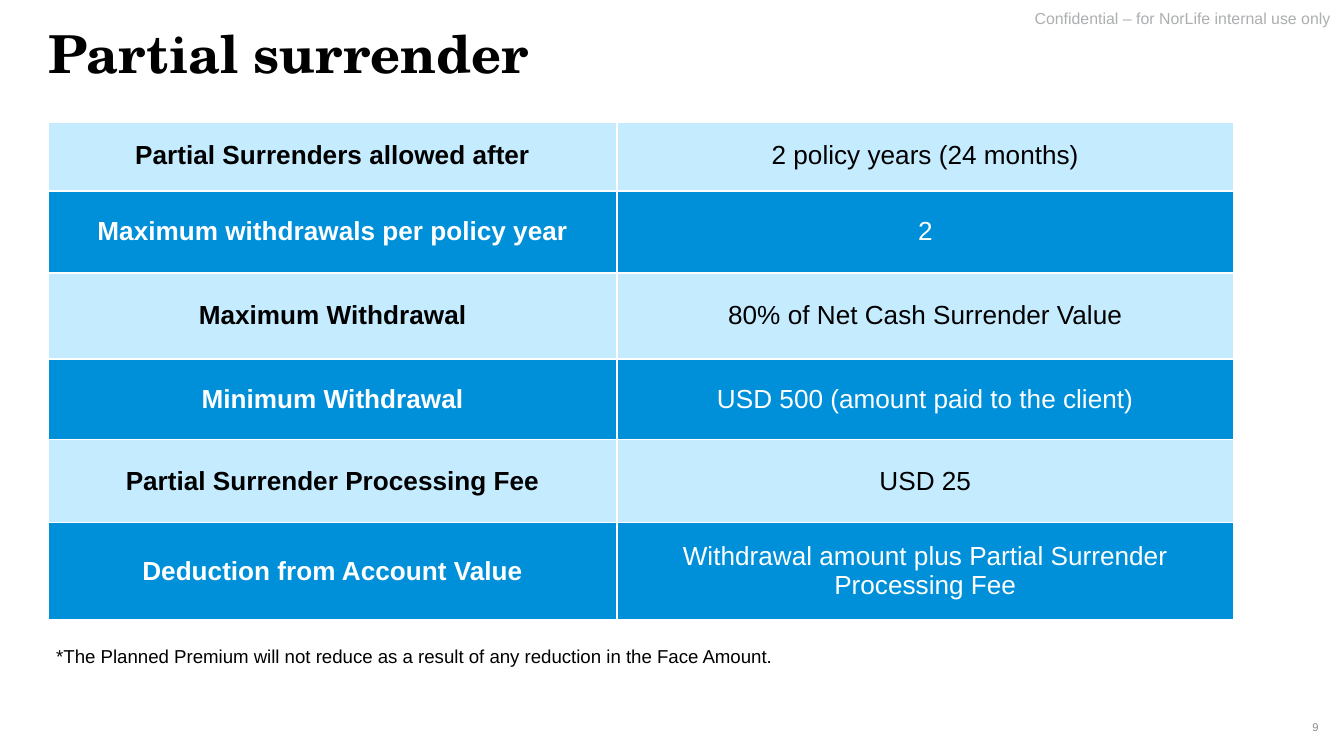
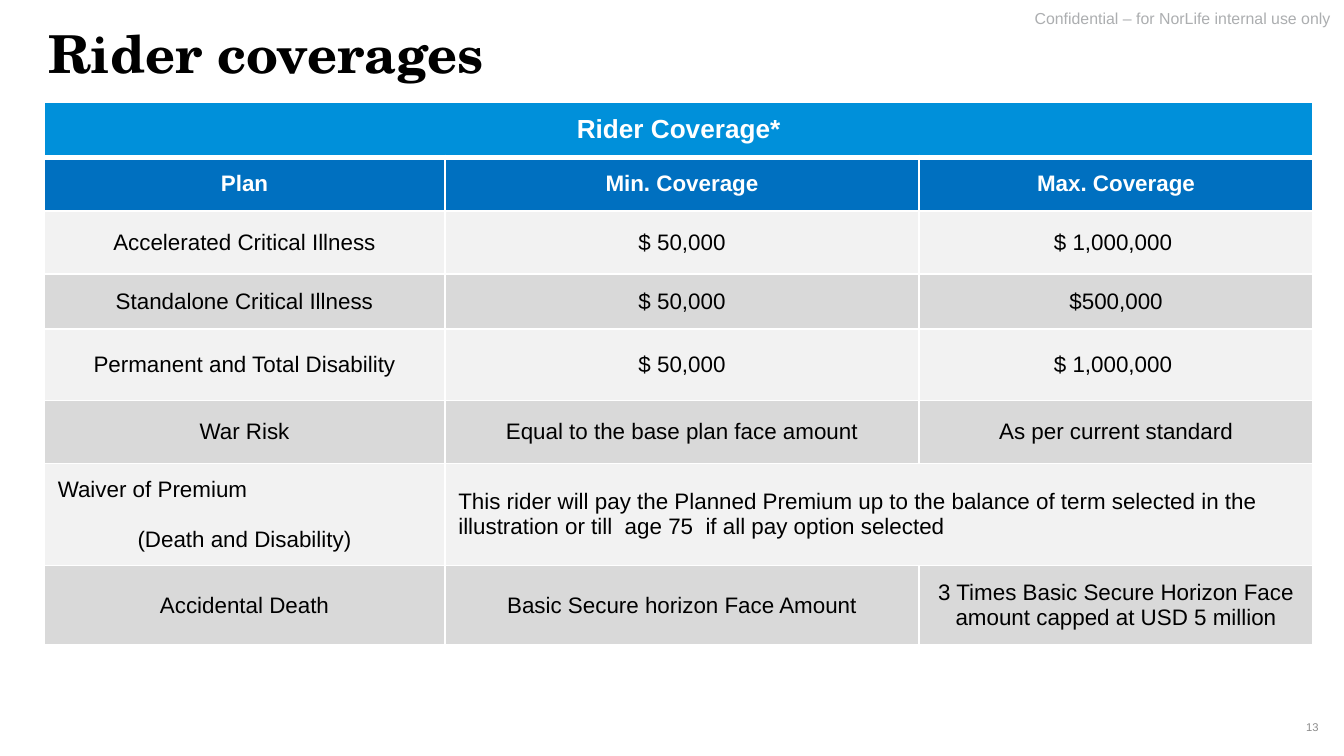
from lxml import etree
from pptx import Presentation
from pptx.dml.color import RGBColor
from pptx.enum.text import MSO_ANCHOR, PP_ALIGN
from pptx.oxml.ns import qn
from pptx.util import Inches, Pt

LEFT, CENTER, RIGHT = PP_ALIGN.LEFT, PP_ALIGN.CENTER, PP_ALIGN.RIGHT
TOP, MIDDLE = MSO_ANCHOR.TOP, MSO_ANCHOR.MIDDLE

BLACK = RGBColor(0x00, 0x00, 0x00)
WHITE = RGBColor(0xFF, 0xFF, 0xFF)
BRIGHT_BLUE = RGBColor(0x00, 0x90, 0xDA)
DEEP_BLUE = RGBColor(0x00, 0x70, 0xC0)
PALE_BLUE = RGBColor(0xC5, 0xEB, 0xFF)
LIGHT_GRAY = RGBColor(0xF2, 0xF2, 0xF2)
MID_GRAY = RGBColor(0xD9, 0xD9, 0xD9)
NOTICE_GRAY = RGBColor(0xAC, 0xAE, 0xB0)
NUMBER_GRAY = RGBColor(0x8C, 0x8C, 0x8C)

BODY_FONT = "Arial"
TITLE_FONT = "TeX Gyre Schola"
THIN, THICK = 1, 3
TITLE_INSETS = (0.07, 0.04)

# Content
NOTICE = "Confidential – for NorLife internal use only"

SURRENDER_ROWS = [
    ("Partial Surrenders allowed after", "2 policy years (24 months)"),
    ("Maximum withdrawals per policy year", "2"),
    ("Maximum Withdrawal", "80% of Net Cash Surrender Value"),
    ("Minimum Withdrawal", "USD 500 (amount paid to the client)"),
    ("Partial Surrender Processing Fee", "USD 25"),
    ("Deduction from Account Value",
     "Withdrawal amount plus Partial Surrender Processing Fee"),
]
SURRENDER_COLUMNS = [4.23, 4.59]
SURRENDER_HEIGHTS = [0.52, 0.61, 0.64, 0.6, 0.62, 0.72]
FOOTNOTE = ("*The Planned Premium will not reduce as a result of any "
            "reduction in the Face Amount.")

# A row with fewer cells than columns stretches its last cell
RIDER_ROWS = [
    ("Rider Coverage*",),
    ("Plan", "Min. Coverage", "Max. Coverage"),
    ("Accelerated Critical Illness", "$ 50,000", "$ 1,000,000 "),
    ("Standalone Critical Illness", "$ 50,000", "$500,000"),
    ("Permanent and Total Disability", "$ 50,000", "$ 1,000,000 "),
    ("War Risk", "Equal to the base plan face amount", "As per current standard"),
    ("Waiver of Premium\n(Death and Disability)",
     "This rider will pay the Planned Premium up to the balance of term selected "
     "in the illustration or till  age 75  if all pay option selected"),
    ("Accidental Death", "Basic Secure horizon Face Amount",
     "3 Times Basic Secure Horizon Face amount capped at USD 5 million"),
]
RIDER_COLUMNS = [2.98, 3.53, 2.93]
RIDER_HEIGHTS = [0.41, 0.4, 0.47, 0.41, 0.53, 0.47, 0.76, 0.59]
WAIVER_ROW = 6


def write(paragraph, text, size, color, bold=False, align=LEFT, font=BODY_FONT):
    paragraph.alignment = align
    run = paragraph.add_run()
    run.text = text
    run.font.name = font
    run.font.size = Pt(size)
    run.font.bold = bold
    run.font.color.rgb = color


def add_text(slide, box, text, size, color, insets=(0.1, 0.05), anchor=TOP,
             line_spacing=None, **style):
    shape = slide.shapes.add_textbox(*[Inches(value) for value in box])
    frame = shape.text_frame
    frame.word_wrap = True
    frame.vertical_anchor = anchor
    frame.margin_left = frame.margin_right = Inches(insets[0])
    frame.margin_top = frame.margin_bottom = Inches(insets[1])
    paragraph = frame.paragraphs[0]
    if line_spacing:
        paragraph.line_spacing = line_spacing
    write(paragraph, text, size, color, **style)


def set_borders(cell, top, bottom):
    properties = cell._tc.get_or_add_tcPr()
    widths = {"a:lnL": THIN, "a:lnR": THIN, "a:lnT": top, "a:lnB": bottom}
    for position, (tag, width) in enumerate(widths.items()):
        line = etree.Element(qn(tag), w=str(Pt(width)))
        fill = etree.SubElement(line, qn("a:solidFill"))
        etree.SubElement(fill, qn("a:srgbClr"), val=str(WHITE))
        properties.insert(position, line)


def add_table(slide, left, top, columns, heights, rows, style, thick_row):
    """style(row, column) gives fill, text colour, size, bold and alignment;
    the edge above thick_row is heavier than the others."""
    graphic_frame = slide.shapes.add_table(
        len(heights), len(columns), Inches(left), Inches(top),
        Inches(sum(columns)), Inches(sum(heights)))
    table = graphic_frame.table
    table.first_row = table.horz_banding = False
    for column, width in zip(table.columns, columns):
        column.width = Inches(width)
    for row, height in zip(table.rows, heights):
        row.height = Inches(height)

    for r, texts in enumerate(rows):
        for c in range(len(columns)):
            cell = table.cell(r, c)
            fill, color, size, bold, align = style(r, c)
            cell.fill.solid()
            cell.fill.fore_color.rgb = fill
            set_borders(cell, THICK if r == thick_row else THIN,
                        THICK if r + 1 == thick_row else THIN)
            cell.vertical_anchor = MIDDLE
            if c >= len(texts):
                continue
            frame = cell.text_frame
            for index, text in enumerate(texts[c].split("\n")):
                paragraph = frame.add_paragraph() if index else frame.paragraphs[0]
                if index:
                    paragraph.space_before = Pt(13.5)
                    align = CENTER
                write(paragraph, text, size, color, bold, align)
        if len(texts) < len(columns):
            table.cell(r, len(texts) - 1).merge(table.cell(r, len(columns) - 1))


def surrender_style(row, column):
    fill, color = [(PALE_BLUE, BLACK), (BRIGHT_BLUE, WHITE)][row % 2]
    return fill, color, 14, column == 0, CENTER


def rider_style(row, column):
    if row == 0:
        return BRIGHT_BLUE, WHITE, 14, True, CENTER
    if row == 1:
        return DEEP_BLUE, WHITE, 12, True, CENTER
    fill = [LIGHT_GRAY, MID_GRAY][row % 2]
    return fill, BLACK, 12, False, LEFT if row == WAIVER_ROW else CENTER


def add_slide(presentation, title, number):
    slide = presentation.slides.add_slide(presentation.slide_layouts[6])
    add_text(slide, (6.94, 0.08, 3.06, 0.17), NOTICE, 8.5, NOTICE_GRAY,
             insets=(0.1, 0), line_spacing=0.9, align=RIGHT)
    add_text(slide, (0.29, 0.17, 7.59, 0.54), title, 28, BLACK,
             insets=TITLE_INSETS, line_spacing=0.9, bold=True, font=TITLE_FONT)
    add_text(slide, (9.14, 5.26, 0.74, 0.3), str(number), 6, NUMBER_GRAY,
             insets=TITLE_INSETS, anchor=MIDDLE, align=RIGHT)
    return slide


def main():
    # Widescreen page, 16:9
    presentation = Presentation()
    presentation.slide_width = Inches(10)
    presentation.slide_height = Inches(10 * 9 / 16)

    # Partial surrender
    slide = add_slide(presentation, "Partial surrender", 9)
    add_table(slide, 0.36, 0.9, SURRENDER_COLUMNS, SURRENDER_HEIGHTS,
              SURRENDER_ROWS, surrender_style, thick_row=0)
    add_text(slide, (0.32, 4.75, 7.39, 0.27), FOOTNOTE, 10, BLACK)

    # Rider coverages
    slide = add_slide(presentation, "Rider coverages", 13)
    add_table(slide, 0.33, 0.76, RIDER_COLUMNS, RIDER_HEIGHTS,
              RIDER_ROWS, rider_style, thick_row=1)

    presentation.save("out.pptx")


if __name__ == "__main__":
    main()
